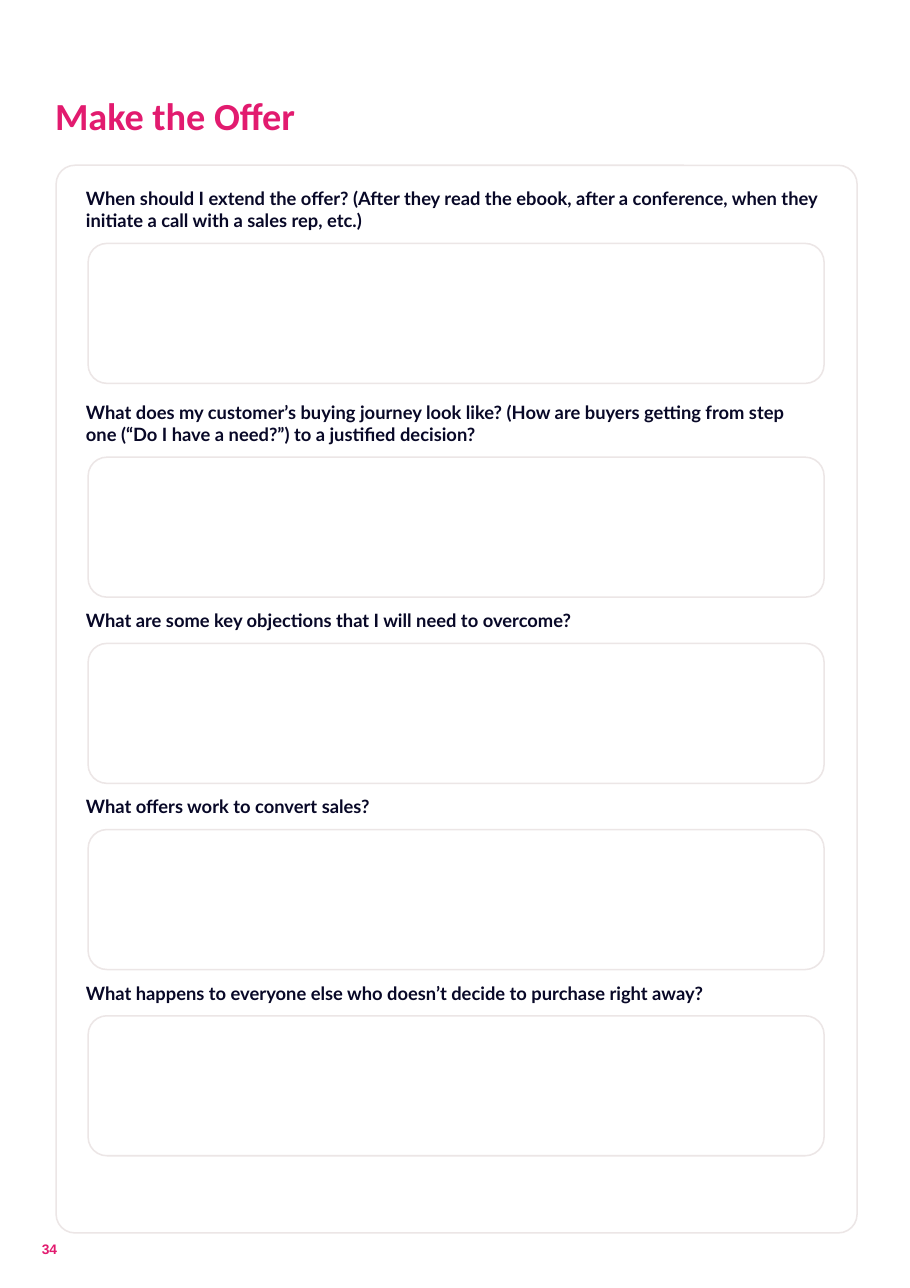
from pptx import Presentation
from pptx.dml.color import RGBColor
from pptx.enum.shapes import MSO_SHAPE as Shape
from pptx.util import Inches, Pt

PINK = RGBColor(0xE2, 0x1B, 0x6F)
NAVY = RGBColor(0x08, 0x08, 0x27)
GREY = RGBColor(0xEC, 0xE6, 0xE6)

TITLE = {"name": "Calibri", "size": Pt(25), "bold": True}
ASK = {"name": "Lato", "size": Pt(12), "bold": True}
PAGE = {"name": "Arial", "size": Pt(9), "bold": True}

RADIUS = 0.17
ITEMS = [
    ("When should I extend the offer? (After they read the ebook, after a "
     "conference, when they initiate a call with a sales rep, etc.)", 2, 6.75),
    ("What does my customer’s buying journey look like? (How are buyers "
     "getting from step one (“Do I have a need?”) to a justified decision?",
     2, 6.42),
    ("What are some key objections that I will need to overcome?", 1, 6.7),
    ("What offers work to convert sales?", 1, 6.7),
    ("What happens to everyone else who doesn’t decide to purchase right "
     "away?", 1, 6.7),
]


def write(slide, box, text, style, color, top=0.02):
    frame = slide.shapes.add_textbox(*map(Inches, box)).text_frame
    margins = {"margin_left": 0, "margin_right": 0,
               "margin_top": Inches(top), "margin_bottom": 0,
               "word_wrap": True}
    for key, value in margins.items():
        setattr(frame, key, value)
    para = frame.paragraphs[0]
    run = para.add_run()
    run.text = text
    for key, value in style.items():
        setattr(run.font, key, value)
    run.font.color.rgb = color
    return para


def frame_box(slide, box):
    shape = slide.shapes.add_shape(Shape.ROUNDED_RECTANGLE,
                                   *map(Inches, box))
    shape.adjustments[0] = RADIUS / min(box[2:])
    shape.shadow.inherit = False
    shape.fill.background()
    shape.line.color.rgb = GREY
    shape.line.width = Pt(1)


def form(slide, box):
    left, top, width, height = box
    frame_box(slide, box)
    y = top + 0.04
    for text, lines, wide in ITEMS:
        y += 0.04 + 0.05 * lines
        tall = 0.03 + 0.2 * lines
        write(slide, (left + 0.27, y, wide, tall), text, ASK, NAVY)
        y += tall + 0.1
        frame_box(slide, (left + 0.29, y, width - 0.59, 1.27))
        y += 1.27


def footer(slide, box):
    para = write(slide, box, "34", PAGE, PINK, 0)
    para.line_spacing = Pt(9.2)


def main():
    deck = Presentation()
    deck.slide_width, deck.slide_height = Inches(8.26), Inches(11.69)
    slide = deck.slides.add_slide(deck.slide_layouts[6])
    write(slide, (0.5, 0.82, 5.47, 0.44), "Make the Offer", TITLE, PINK)
    form(slide, (0.51, 1.5, 7.27, 9.69))
    footer(slide, (0.38, 11.28, 0.22, 0.15))
    deck.save("out.pptx")


if __name__ == "__main__":
    main()
